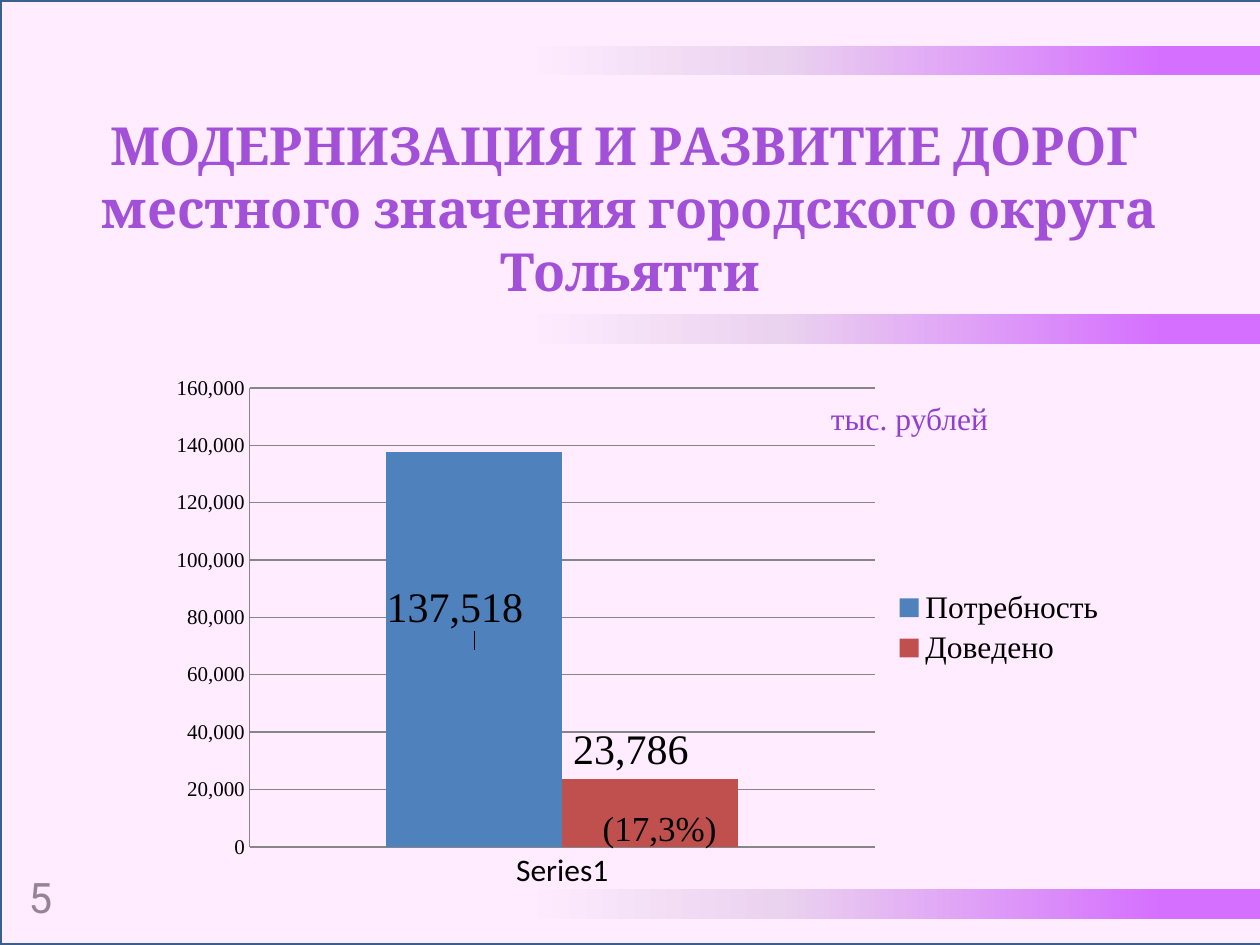
from lxml import etree
from pptx import Presentation
from pptx.chart.data import CategoryChartData
from pptx.dml.color import RGBColor
from pptx.enum.chart import XL_CHART_TYPE, XL_LABEL_POSITION, XL_LEGEND_POSITION, XL_TICK_MARK
from pptx.enum.shapes import MSO_SHAPE
from pptx.enum.text import MSO_ANCHOR, MSO_AUTO_SIZE, PP_ALIGN
from pptx.oxml import parse_xml
from pptx.oxml.ns import qn
from pptx.util import Cm, Pt

COLUMN = XL_CHART_TYPE.COLUMN_CLUSTERED
CENTER, OUTSIDE = XL_LABEL_POSITION.CENTER, XL_LABEL_POSITION.OUTSIDE_END
RIGHT, NO_TICK = XL_LEGEND_POSITION.RIGHT, XL_TICK_MARK.NONE
RECT, MIDDLE = MSO_SHAPE.RECTANGLE, MSO_ANCHOR.MIDDLE
NO_FIT, MID = MSO_AUTO_SIZE.NONE, PP_ALIGN.CENTER

PURPLE = RGBColor(0x8F, 0x40, 0xD0)
GRAY = RGBColor(0x80, 0x80, 0x80)
BLACK = RGBColor(0, 0, 0)
BLUE = RGBColor(0x4F, 0x81, 0xBD)
RED = RGBColor(0xC0, 0x50, 0x4D)
PINK = RGBColor(0xFF, 0x99, 0xFF)
NAVY = RGBColor(0x3A, 0x5F, 0x8C)
LINE = RGBColor(0x86, 0x86, 0x86)
FADE = [(13, RGBColor(0xCC, 0x66, 0xFF)), (65, RGBColor(0xE6, 0xE0, 0xEC)),
        (100, RGBColor(0xFF, 0xFF, 0xFF))]
SERIF = "Times New Roman"
A_NS = "http://schemas.openxmlformats.org/drawingml/2006/main"
WIDTH, HEIGHT = Cm(25.4), Cm(19.05)


def style(font, name, size, color, bold=False):
    """Set the face, size and colour of a font."""
    font.name, font.size, font.bold = name, Pt(size), bold
    font.color.rgb = color


def add_title(slide, box, text):
    """Place and format the title."""
    title = slide.shapes.title
    title.left, title.top, title.width, title.height = box
    frame = title.text_frame
    frame.text = text
    frame.auto_size, frame.vertical_anchor = NO_FIT, MIDDLE
    para = frame.paragraphs[0]
    para.alignment, para.line_spacing = MID, 1.0
    style(para.font, "Cambria", 30, PURPLE, True)


def add_note(slide, box, text, face, size, color):
    """Add a one-line text box."""
    frame = slide.shapes.add_textbox(*box).text_frame
    frame.text = text
    frame.word_wrap = False
    style(frame.paragraphs[0].font, face, size, color)


def add_band(slide, box):
    """Add a band that fades out to the left."""
    band = slide.shapes.add_shape(RECT, *box)
    band.shadow.inherit = False
    band.line.fill.background()
    band.fill.gradient()
    band.fill.gradient_angle = 180
    stops = band._element.spPr.find(qn("a:gradFill")).find(qn("a:gsLst"))
    for stop in list(stops):
        stops.remove(stop)
    for pos, color in FADE:
        stop = etree.SubElement(stops, qn("a:gs"), pos=str(pos * 1000))
        etree.SubElement(stop, qn("a:srgbClr"), val=str(color))


def add_tint(slide, box):
    """Lay a clear pink sheet with a thin frame over the slide."""
    sheet = slide.shapes.add_shape(RECT, *box)
    sheet.shadow.inherit = False
    sheet.fill.solid()
    sheet.fill.fore_color.rgb = PINK
    color = sheet._element.spPr.find(qn("a:solidFill"))[0]
    etree.SubElement(color, qn("a:alpha"), val="18000")
    sheet.line.color.rgb = NAVY
    sheet.line.width = Pt(2)


def layout(**parts):
    """Return a manual chart layout."""
    items = "".join(f'<c:{key} val="{val}"/>' for key, val in parts.items())
    space = "http://schemas.openxmlformats.org/drawingml/2006/chart"
    return parse_xml(f'<c:layout xmlns:c="{space}"><c:manualLayout>{items}'
                     '</c:manualLayout></c:layout>')


def add_bars(slide, box):
    """Add the chart of needed and granted funds."""
    data = CategoryChartData(number_format="#,##0")
    data.categories = ["Series1"]
    data.add_series("Потребность", [137518])
    data.add_series("Доведено", [23786])
    chart = slide.shapes.add_chart(COLUMN, *box, data).chart
    style(chart.font, "Calibri", 18, BLACK)
    chart.has_title = False
    chart.has_legend = True
    chart.legend.position = RIGHT
    chart.legend.include_in_layout = False
    style(chart.legend.font, SERIF, 18, BLACK)

    values = chart.value_axis
    values.minimum_scale, values.maximum_scale, values.major_unit = 0, 160000, 20000
    values.tick_labels.number_format = "#,##0"
    values.tick_labels.number_format_is_linked = False
    style(values.tick_labels.font, SERIF, 12, BLACK)
    values.major_gridlines.format.line.color.rgb = LINE
    for axis in (values, chart.category_axis):
        axis.major_tick_mark = axis.minor_tick_mark = NO_TICK
        axis.format.line.color.rgb = LINE

    plot = chart.plots[0]
    plot.gap_width, plot.overlap, plot.vary_by_categories = 155, 0, False
    looks = [(BLUE, CENTER, -0.02, -0.08), (RED, OUTSIDE, -0.02, 0)]
    for series, (color, place, x, y) in zip(plot.series, looks):
        series.format.fill.solid()
        series.format.fill.fore_color.rgb = color
        label = series.points[0].data_label
        style(label.font, SERIF, 24, BLACK)
        label.position = place
        mark = series._element.find(qn("c:dLbls")).find(qn("c:dLbl"))
        mark.insert(1, layout(x=x, y=y))

    area = chart._chartSpace.chart.plotArea
    for old in area.findall(qn("c:layout")):
        area.remove(old)
    area.insert(0, layout(layoutTarget="inner", xMode="edge", yMode="edge",
                          x=0.11, y=0.04, w=0.64, h=0.88))


def main():
    """Build the slide and save it."""
    deck = Presentation()
    deck.slide_width, deck.slide_height = WIDTH, HEIGHT
    slide = deck.slides.add_slide(deck.slide_layouts[5])
    add_note(slide, (Cm(0.33), Cm(17.45), Cm(0.8), Cm(1.27)), "5", "Roboto", 24, GRAY)
    add_title(slide, (0, Cm(2.13), WIDTH, Cm(4.11)),
              "МОДЕРНИЗАЦИЯ И РАЗВИТИЕ ДОРОГ \vместного значения городского округа Тольятти")
    for top in (0.92, 6.33, 17.93):
        add_band(slide, (Cm(10.5), Cm(top), Cm(14.9), Cm(0.6)))
    add_tint(slide, (0, 0, Cm(25.45), HEIGHT))
    add_bars(slide, (Cm(2.87), Cm(7.4), Cm(19.69), Cm(10.54)))
    add_note(slide, (Cm(16.5), Cm(7.92), Cm(3.7), Cm(1.03)), "тыс. рублей", SERIF, 18, PURPLE)
    add_note(slide, (Cm(11.9), Cm(16.13), Cm(2.83), Cm(1.11)), "(17,3%)", SERIF, 20, BLACK)
    deck.save("out.pptx")


if __name__ == "__main__":
    main()
